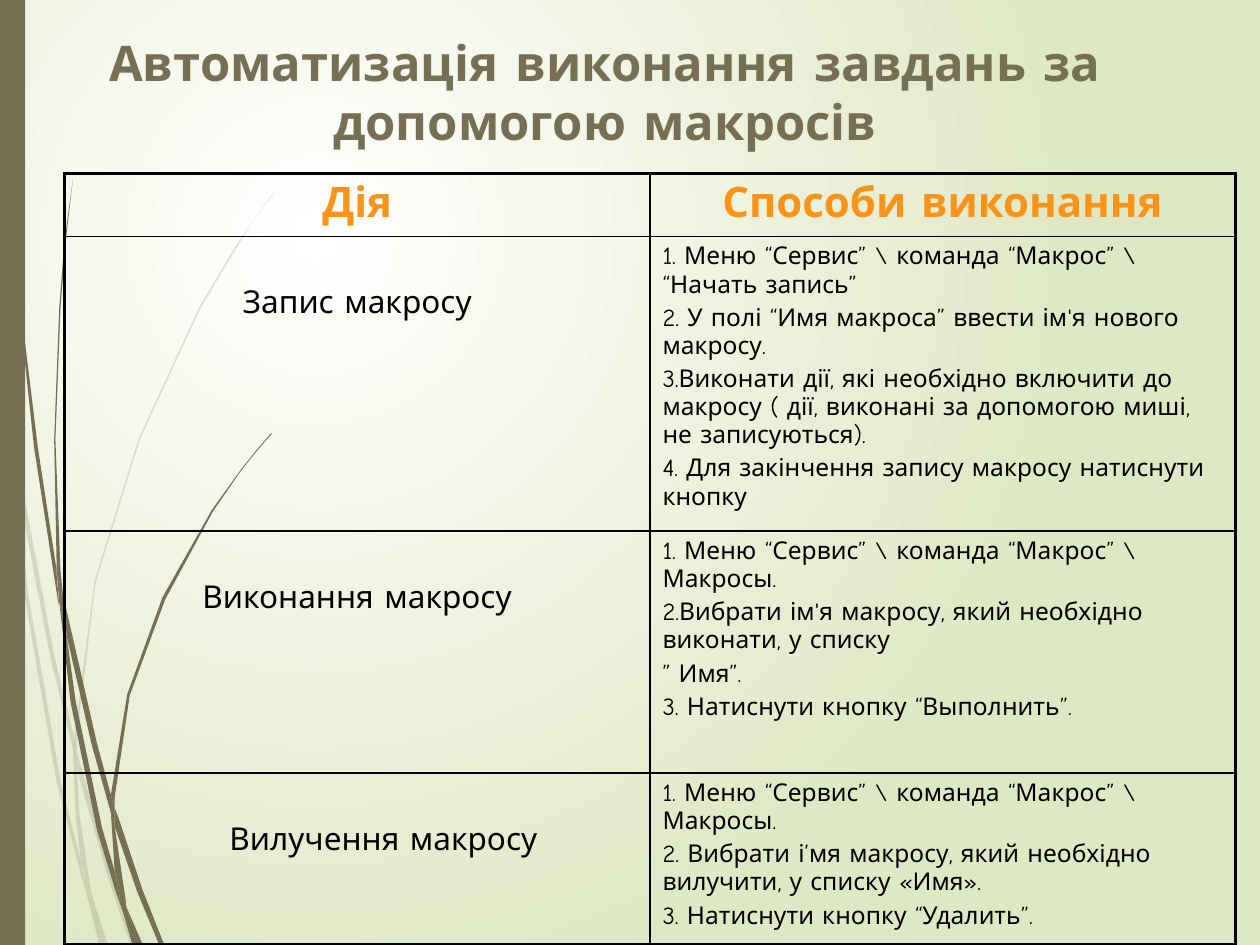
from lxml import etree
from pptx import Presentation
from pptx.dml.color import RGBColor
from pptx.enum.shapes import MSO_SHAPE
from pptx.enum.text import MSO_ANCHOR, MSO_AUTO_SIZE, PP_ALIGN
from pptx.oxml.ns import qn
from pptx.util import Pt

CENTER, LEFT = PP_ALIGN.CENTER, PP_ALIGN.LEFT
TOP, NO_AUTOFIT = MSO_ANCHOR.TOP, MSO_AUTO_SIZE.NONE
RECTANGLE = MSO_SHAPE.RECTANGLE

COLORS = {"bark": "766F54", "glow": "FFFFFF", "meadow": "DFE8C4",
          "header": "FB9318", "ink": "000000"}
FONT = "Comic Neue"
THICK, THIN = 2.25, 1
TITLE_ONLY = 5

# Outlines of the grass blades, in hundredths of an inch
PALE_GRASS = [
    [(40, 522), (59, 599), (59, 586), (43, 520), (10, 345), (12, 376)],
    [(64, 607), (61, 596), (61, 610), (85, 694), (104, 751), (108, 751), (88, 692)],
    [(83, 751), (86, 751), (73, 711)],
    [(64, 683), (48, 619), (22, 469), (12, 376), (8, 350), (19, 470), (45, 621),
     (64, 693), (70, 714), (69, 707)],
    [(58, 599), (60, 646), (64, 683), (67, 692), (73, 711), (72, 706), (63, 646),
     (61, 610), (61, 608)],
    [(61, 584), (76, 462), (111, 349), (159, 245), (187, 198), (201, 175), (217, 154),
     (217, 153), (201, 175), (186, 197), (158, 244), (110, 348), (75, 461), (59, 584),
     (59, 586), (61, 596)],
    [(70, 714), (79, 751), (82, 751)],
    [(61, 608), (61, 610), (61, 596), (59, 586), (58, 599)],
    [(67, 692), (65, 683), (69, 707), (70, 714), (82, 751), (83, 751), (73, 711)],
]
DARK_GRASS = [
    [(5, 110), (14, 233), (27, 355), (46, 477), (47, 481), (45, 457), (45, 453),
     (30, 355), (15, 232), (6, 109), (4, 48), (3, 0), (2, 0), (3, 48)],
    [(73, 592), (88, 645), (88, 633), (88, 631), (77, 590), (50, 472), (53, 505)],
    [(94, 649), (91, 641), (91, 656), (109, 708), (126, 749), (130, 749), (113, 706)],
    [(91, 691), (81, 657), (60, 556), (53, 505), (47, 477), (56, 557), (77, 659),
     (92, 708), (97, 722), (96, 717)],
    [(50, 472), (48, 453), (44, 349), (48, 245), (52, 193), (58, 141), (58, 141),
     (51, 193), (47, 245), (43, 349), (45, 449), (49, 472)],
    [(110, 749), (113, 749), (100, 719)],
    [(47, 477), (53, 505), (50, 472), (49, 472), (45, 449), (45, 453)],
    [(91, 633), (103, 552), (131, 476), (169, 406), (191, 374), (203, 359), (216, 344),
     (215, 344), (203, 358), (191, 373), (168, 405), (129, 474), (101, 551), (88, 631),
     (91, 641)],
    [(97, 722), (105, 749), (108, 749)],
    [(88, 645), (91, 691), (96, 706), (100, 719), (100, 716), (91, 656), (90, 651)],
    [(88, 645), (90, 651), (91, 656), (91, 641), (88, 631), (88, 633)],
    [(96, 706), (91, 691), (96, 717), (97, 722), (108, 749), (110, 749), (100, 719)],
]

HEADERS = ["Дія", "Способи виконання"]
# Action, extra left margin, steps
ACTIONS = [
    ("Запис макросу", 0, [
        r"1. Меню “Сервис” \ команда “Макрос” \ “Начать запись”",
        "2. У полі “Имя макроса” ввести ім'я нового макросу.",
        "3.Виконати дії, які необхідно включити до макросу ( дії, виконані "
        "за допомогою миші, не записуються).",
        "4. Для закінчення запису макросу натиснути кнопку"]),
    ("Виконання макросу", 0, [
        r"1. Меню “Сервис” \ команда “Макрос” \ Макросы.",
        "2.Вибрати ім'я макросу, який необхідно виконати, у списку",
        "” Имя”.",
        "3. Натиснути кнопку “Выполнить”."]),
    ("Вилучення макросу", 30, [
        r"1. Меню “Сервис” \ команда “Макрос” \ Макросы.",
        "2. Вибрати і’мя макросу, який необхідно вилучити, у списку «Имя».",
        "3. Натиснути кнопку “Удалить”."]),
]


def rgb(name):
    return RGBColor.from_string(COLORS[name])


class MacroSlide:
    def __init__(self, deck):
        self.slide = deck.slides.add_slide(deck.slide_layouts[TITLE_ONLY])

    def background(self, inner, outer):
        fill = self.slide.background.fill
        fill.gradient()
        for stop, name in zip(fill.gradient_stops, (inner, outer)):
            stop.color.rgb = rgb(name)
        gradient = self.slide.element.xpath(".//p:bgPr/a:gradFill")[0]
        for linear in gradient.findall(qn("a:lin")):
            gradient.remove(linear)
        circle = etree.SubElement(gradient, qn("a:path"), path="circle")
        etree.SubElement(circle, qn("a:fillToRect"),
                         l="50000", t="50000", r="100000", b="100000")

    def paint(self, shape, color, opacity=100):
        shape.shadow.inherit = False
        shape.fill.solid()
        shape.fill.fore_color.rgb = rgb(color)
        shape.line.fill.background()
        if opacity < 100:
            tint = shape.element.xpath("p:spPr/a:solidFill/a:srgbClr")[0]
            etree.SubElement(tint, qn("a:alpha"), val=str(opacity * 1000))

    def grass(self, blades, color, opacity=100):
        tuft = self.slide.shapes.add_group_shape()
        for root, *outline in blades:
            builder = tuft.shapes.build_freeform(*root, scale=Pt(0.72))
            builder.add_line_segments(outline, close=True)
            self.paint(builder.convert_to_shape(), color, opacity)

    def bar(self, left, top, width, height, color):
        bar = self.slide.shapes.add_shape(
            RECTANGLE, Pt(left), Pt(top), Pt(width), Pt(height))
        self.paint(bar, color)

    def put_text(self, frame, lines, size, color, align, bold=False):
        frame.text = "\n".join(lines)
        for paragraph in frame.paragraphs:
            paragraph.alignment = align
            paragraph.space_before = Pt(size * 0.2)
            font = paragraph.font
            font.name, font.size, font.bold = FONT, Pt(size), bold
            font.color.rgb = rgb(color)

    def title(self, text, left, top, width, height):
        title = self.slide.shapes.title
        title.left, title.top = Pt(left), Pt(top)
        title.width, title.height = Pt(width), Pt(height)
        frame = title.text_frame
        frame.word_wrap, frame.auto_size = True, NO_AUTOFIT
        frame.vertical_anchor = TOP
        self.put_text(frame, [text], 28, "bark", CENTER, bold=True)

    def borders(self, cell, outer_sides):
        properties = cell._tc.get_or_add_tcPr()
        for side in "LRTB":
            weight = THICK if side in outer_sides else THIN
            line = etree.SubElement(properties, qn(f"a:ln{side}"), w=str(Pt(weight)))
            ink = etree.SubElement(line, qn("a:solidFill"))
            etree.SubElement(ink, qn("a:srgbClr"), val=COLORS["ink"])
        cell.fill.background()

    def table(self, left, top, widths, heights):
        table = self.slide.shapes.add_table(
            len(heights), len(widths), Pt(left), Pt(top),
            Pt(sum(widths)), Pt(sum(heights))).table
        table.first_row = table.horz_banding = False
        for column, width in zip(table.columns, widths):
            column.width = Pt(width)
        last = len(heights) - 1
        for r, height in enumerate(heights):
            table.rows[r].height = Pt(height)
            rows = ("T" if r == 0 else "") + ("B" if r == last else "")
            for c, side in enumerate("LR"):
                self.borders(table.cell(r, c), side + rows)
        return table


def main():
    deck = Presentation()
    deck.slide_width, deck.slide_height = Pt(720), Pt(540)
    page = MacroSlide(deck)

    # Backdrop
    page.background("glow", "meadow")
    page.grass(PALE_GRASS, "bark", opacity=20)
    page.grass(DARK_GRASS, "bark")
    page.bar(0, 0, 14.4, 540, "bark")

    # Title
    page.title("Автоматизація виконання завдань за допомогою макросів",
               36.7, 15.1, 617.8, 74.2)

    # Actions and the ways to perform them
    table = page.table(36.9, 99.2, [334.5, 334.5], [36, 168.3, 138.3, 98])
    for column, header in enumerate(HEADERS):
        page.put_text(table.cell(0, column).text_frame, [header], 24, "header", CENTER, True)
    for row, (action, indent, steps) in enumerate(ACTIONS, start=1):
        name = table.cell(row, 0)
        name.margin_top, name.margin_left = Pt(28), Pt(7.2 + indent)
        page.put_text(name.text_frame, [action], 18, "ink", CENTER)
        page.put_text(table.cell(row, 1).text_frame, steps, 14, "ink", LEFT)

    deck.save("out.pptx")


if __name__ == "__main__":
    main()
